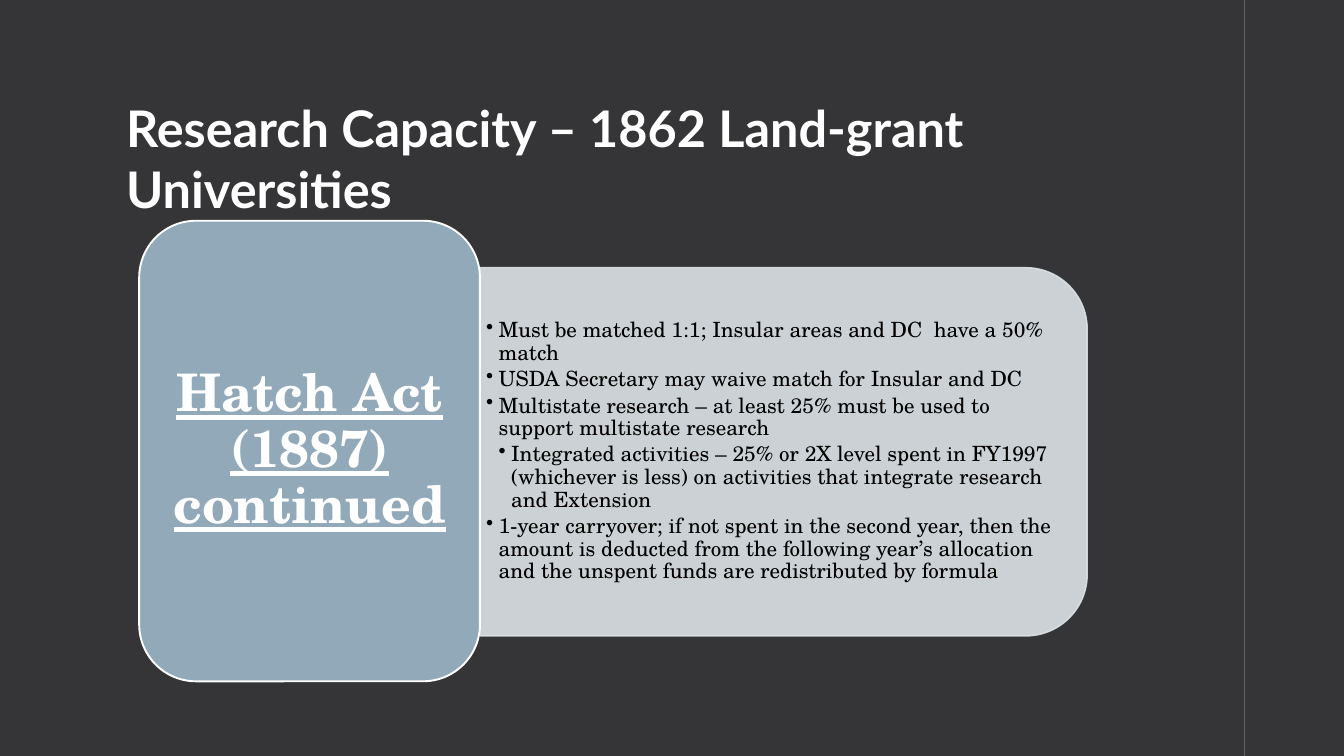
import pptx
import pptx.util
import pptx.dml.color
import pptx.enum.shapes
import pptx.enum.text
import pptx.oxml.ns
import lxml.etree

Pt = pptx.util.Pt
KINDS = pptx.enum.shapes.MSO_SHAPE
ALIGN = pptx.enum.text.PP_ALIGN
MIDDLE = pptx.enum.text.MSO_ANCHOR.MIDDLE

COLORS = {
    "dark": "353537",
    "white": "FFFFFF",
    "black": "000000",
    "card": "92A9B9",
    "panel": "DCE2E6",
}

# Level and wording of each point in the panel
POINTS = [
    (1, "Must be matched 1:1; Insular areas and DC  have a 50% match"),
    (1, "USDA Secretary may waive match for Insular and DC"),
    (1, "Multistate research – at least 25% must be used to support multistate research"),
    (2, "Integrated activities – 25% or 2X level spent in FY1997 (whichever is less) "
        "on activities that integrate research and Extension"),
    (1, "1-year carryover; if not spent in the second year, then the amount is deducted "
        "from the following year’s allocation and the unspent funds are redistributed by formula"),
]
INDENT = 9


def color(name):
    return pptx.dml.color.RGBColor.from_string(COLORS[name])


def fade(fill, percent):
    """Make a solid fill partly transparent."""
    node = fill._xPr.find(".//" + pptx.oxml.ns.qn("a:srgbClr"))
    alpha = lxml.etree.SubElement(node, pptx.oxml.ns.qn("a:alpha"))
    alpha.set("val", str(percent * 1000))


def add_block(slide, kind, box, fill, line=None, width=1):
    block = slide.shapes.add_shape(kind, *map(Pt, box))
    block.shadow.inherit = False
    block.fill.solid()
    block.fill.fore_color.rgb = color(fill)
    if line:
        block.line.color.rgb = color(line)
        block.line.width = Pt(width)
    else:
        block.line.fill.background()
    return block


def set_frame(frame, side, top, anchor=None):
    frame.word_wrap = True
    frame.margin_left = frame.margin_right = Pt(side)
    frame.margin_top = frame.margin_bottom = Pt(top)
    if anchor is not None:
        frame.vertical_anchor = anchor


def style(para, font, size, name, bold=False, under=False):
    for run in para.runs:
        run.font.name = font
        run.font.size = Pt(size)
        run.font.color.rgb = color(name)
        run.font.bold = bold
        run.font.underline = under


def add_bullet(para, level):
    para.level = level
    props = para._p.get_or_add_pPr()
    props.set("marL", str(Pt(INDENT * level)))
    props.set("indent", str(-Pt(INDENT)))
    mark = lxml.etree.SubElement(props, pptx.oxml.ns.qn("a:buChar"))
    mark.set("char", "•")


def add_title(slide, text):
    title = slide.shapes.add_textbox(Pt(83), Pt(66), Pt(760), Pt(51))
    set_frame(title.text_frame, 7.2, 3.6)
    para = title.text_frame.paragraphs[0]
    para.text = text
    para.space_after = Pt(6)
    style(para, "Lato", 36, "white", bold=True)


def add_panel(slide):
    # The rounded end points right after a quarter turn
    panel = add_block(slide, KINDS.ROUND_2_SAME_RECTANGLE,
                      (428.3, 106, 263, 433.5), "panel", "panel", 1.1)
    panel.rotation = 90
    fade(panel.fill, 90)
    fade(panel.line.fill, 90)


def add_points(slide, points):
    box = slide.shapes.add_textbox(Pt(343), Pt(203.8), Pt(420.5), Pt(237.6))
    frame = box.text_frame
    set_frame(frame, 4.2, 2.1, MIDDLE)
    frame.text = "\n".join(text for level, text in points)
    for para, (level, text) in zip(frame.paragraphs, points):
        para.line_spacing = 0.9
        para.space_after = Pt(2.5)
        add_bullet(para, level)
        style(para, "TeX Gyre Schola", 15, "black")


def add_card(slide, text):
    card = add_block(slide, KINDS.ROUNDED_RECTANGLE,
                     (99.4, 157.7, 243.4, 329), "card", "white", 1.35)
    set_frame(card.text_frame, 11, 5.5, MIDDLE)
    para = card.text_frame.paragraphs[0]
    para.text = text
    para.alignment = ALIGN.CENTER
    para.line_spacing = 0.9
    style(para, "TeX Gyre Schola", 37, "white", bold=True, under=True)


def main():
    deck = pptx.Presentation()
    deck.slide_width, deck.slide_height = Pt(960), Pt(540)
    slide = deck.slides.add_slide(deck.slide_layouts[6])

    # Dark ground: side strip and main area
    add_block(slide, KINDS.RECTANGLE, (889, 0, 71, 540), "dark")
    add_block(slide, KINDS.RECTANGLE, (0, 0, 889, 540), "dark")

    # Heading, then the panel with its card
    add_title(slide, "Research Capacity – 1862 Land-grant Universities")
    add_panel(slide)
    add_points(slide, POINTS)
    add_card(slide, "Hatch Act (1887) continued")

    deck.save("out.pptx")


if __name__ == "__main__":
    main()
